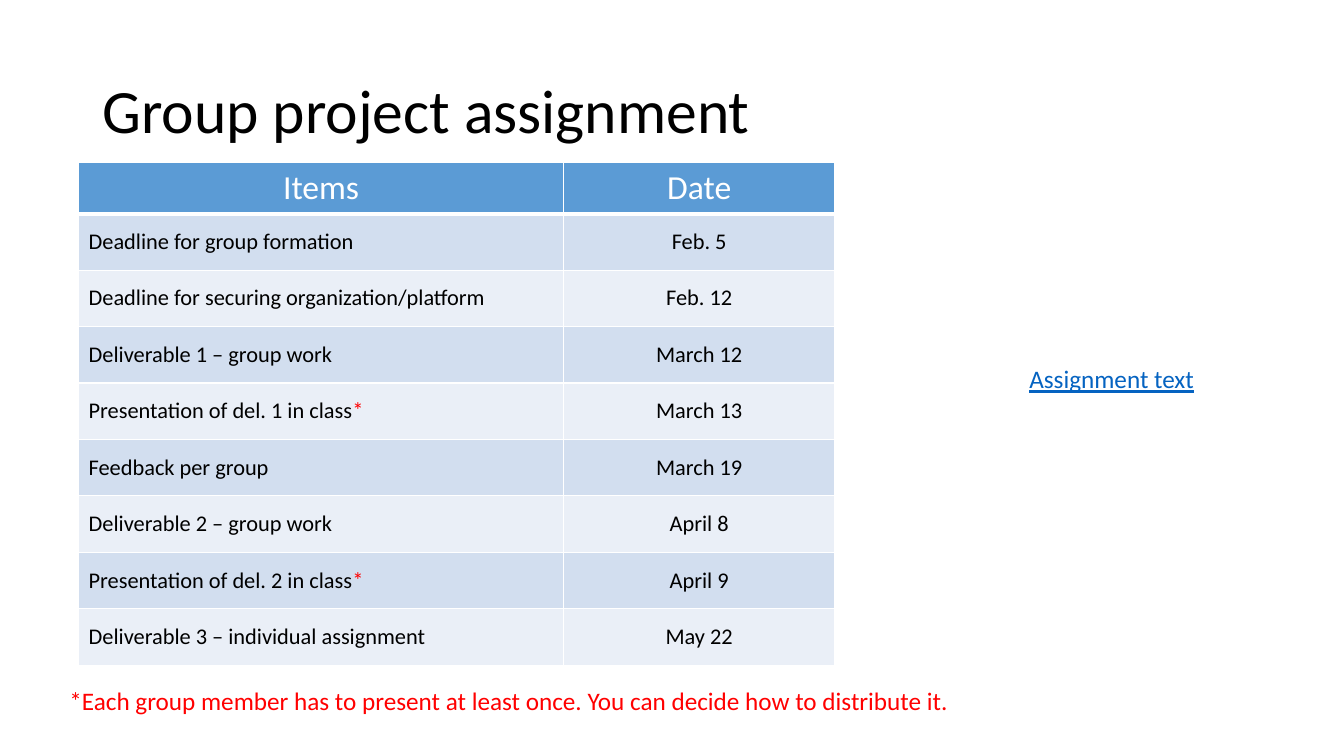
from dataclasses import dataclass

from lxml.etree import SubElement
from pptx import Presentation
from pptx.dml.color import RGBColor as Rgb
from pptx.enum.text import MSO_ANCHOR as Anchor, PP_ALIGN as Align
from pptx.oxml.ns import qn
from pptx.util import Inches, Pt


@dataclass(frozen=True)
class Theme:
    font: str = "Calibri"
    ink: str = "000000"
    white: str = "FFFFFF"
    red: str = "FF0000"
    link: str = "0563C1"
    head: str = "5B9BD5"
    bands: tuple = ("D2DEEF", "EAEFF7")
    title: int = 44
    top: int = 24
    note: int = 18
    cell: int = 16


class Page:
    def __init__(self, deck, theme):
        self.theme = theme
        self.slide = deck.slides.add_slide(deck.slide_layouts[6])

    def label(self, para, parts, size, align=Align.LEFT, line=False):
        """Fill a paragraph with (text, colour) parts."""
        para.alignment = align
        for text, color in parts:
            run = para.add_run()
            run.text = text
            run.font.bold = False
            run.font.color.rgb = Rgb.from_string(color)
        font = para.font
        font.name, font.size = self.theme.font, Pt(size)
        if line:
            font.underline = True

    def text(self, box, text, size, color, wrap=False, line=False):
        shape = self.slide.shapes.add_textbox(*map(Inches, box))
        frame = shape.text_frame
        frame.word_wrap = wrap
        if wrap:
            frame.vertical_anchor = Anchor.MIDDLE
        para = frame.paragraphs[0]
        self.label(para, [(text, color)], size, line=line)
        return para

    def edge(self, cell, base):
        """Draw white borders, with the given width below the cell."""
        props = cell._tc.get_or_add_tcPr()
        for side, width in (("L", 1), ("R", 1), ("T", 1), ("B", base)):
            line = SubElement(props, qn(f"a:ln{side}"), w=str(Pt(width)))
            fill = SubElement(line, qn("a:solidFill"))
            SubElement(fill, qn("a:srgbClr"), val=self.theme.white)

    def table(self, box, widths, heights, rows):
        look = self.theme
        grid = self.slide.shapes.add_table(
            len(rows), len(widths), *map(Inches, box)).table
        for col, width in zip(grid.columns, widths):
            col.width = Inches(width)
        for i, (row, height) in enumerate(zip(grid.rows, heights)):
            row.height = Inches(height)
            head = i == 0
            fill = look.head if head else look.bands[(i - 1) % 2]
            ink = look.white if head else look.ink
            size = look.top if head else look.cell
            for j, (cell, text) in enumerate(zip(row.cells, rows[i])):
                self.edge(cell, 3 if head else 1)
                cell.fill.solid()
                cell.fill.fore_color.rgb = Rgb.from_string(fill)
                cell.vertical_anchor = Anchor.TOP if head else Anchor.MIDDLE
                # A closing star points to the red note
                parts = [(text.rstrip("*"), ink)]
                if text.endswith("*"):
                    parts.append(("*", look.red))
                align = Align.CENTER if head or j else Align.LEFT
                self.label(cell.text_frame.paragraphs[0], parts, size, align)


ROWS = [
    ("Items", "Date"),
    ("Deadline for group formation", "Feb. 5"),
    ("Deadline for securing organization/platform", "Feb. 12"),
    ("Deliverable 1 – group work", "March 12"),
    ("Presentation of del. 1 in class*", "March 13"),
    ("Feedback per group", "March 19"),
    ("Deliverable 2 – group work", "April 8"),
    ("Presentation of del. 2 in class*", "April 9"),
    ("Deliverable 3 – individual assignment", "May 22"),
]


def main():
    deck = Presentation()
    deck.slide_width, deck.slide_height = Inches(13.33), Inches(7.5)
    look = Theme()
    page = Page(deck, look)

    # Title
    title = page.text((0.92, 0.4, 11.5, 1.45), "Group project assignment",
                      look.title, look.ink, wrap=True)
    title.line_spacing = 0.9

    # Schedule
    page.table((0.78, 1.61, 7.5, 5), (4.81, 2.69), [0.51] + [0.56] * 8, ROWS)

    # Note and link text
    page.text((0.59, 6.75, 9.02, 0.4),
              "*Each group member has to present at least once. "
              "You can decide how to distribute it.", look.note, look.red)
    page.text((10.11, 3.56, 1.85, 0.4), "Assignment text",
              look.note, look.link, line=True)

    deck.save("out.pptx")


if __name__ == "__main__":
    main()
